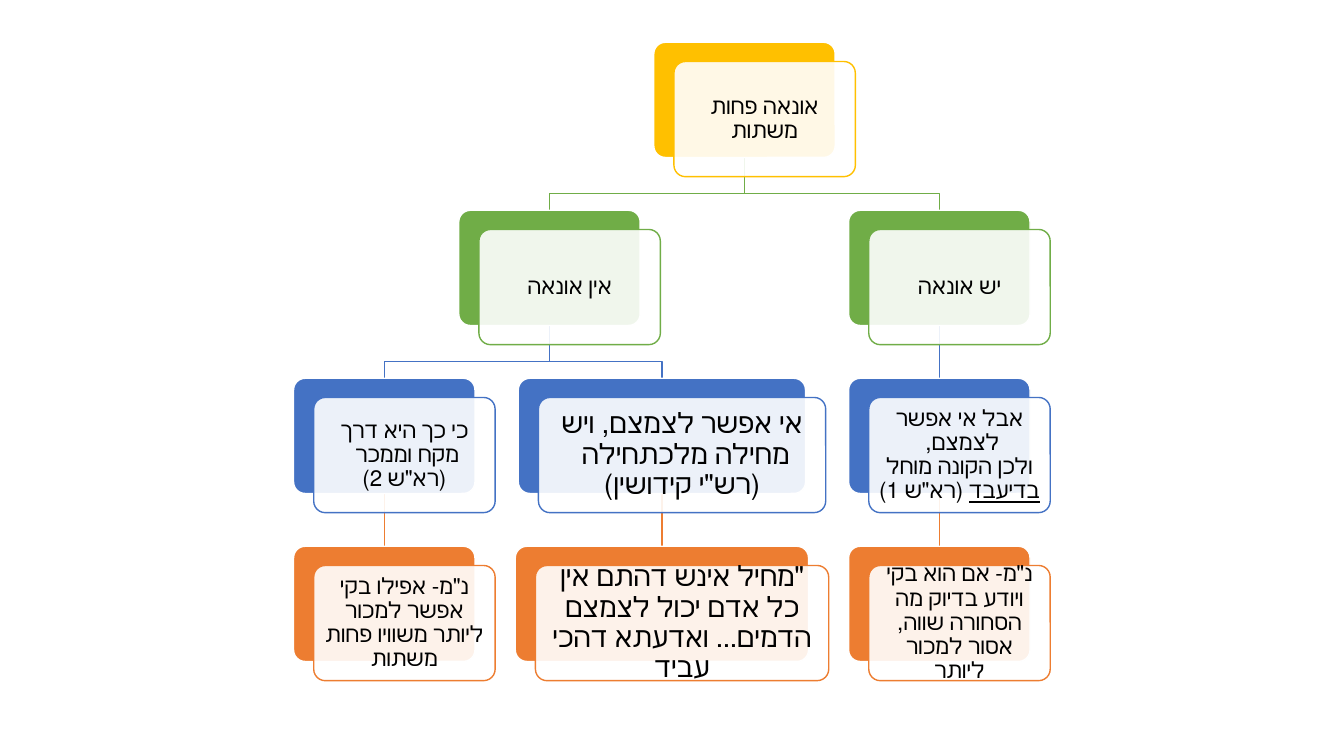
from lxml.etree import SubElement
from pptx import Presentation
from pptx.dml.color import RGBColor
from pptx.enum.shapes import MSO_CONNECTOR, MSO_SHAPE
from pptx.enum.text import MSO_ANCHOR, PP_ALIGN
from pptx.oxml.ns import qn
from pptx.util import Pt

FONT = "Calibri"
LEVEL_COLORS = ["FFC000", "70AD47", "4472C4", "ED7D31"]
NARROW = 129.6

# name: (parent, level, center, width, text size, text pieces with underline flag)
CARDS = {
    "root": (None, 0, 531.8, NARROW, 16, [("אונאה פחות משתות", False)]),
    "applies": ("root", 1, 671, NARROW, 16, [("יש אונאה", False)]),
    "waived": ("applies", 2, 671, NARROW, 16, [
        ("אבל אי אפשר לצמצם, \nולכן הקונה מוחל ", False),
        ("בדיעבד", True),
        (" (רא\"ש 1)", False)]),
    "expert": ("waived", 3, 671, NARROW, 16, [
        ("נ\"מ- אם הוא בקי ויודע בדיוק מה הסחורה שווה, אסור למכור ליותר", False)]),
    "exempt": ("root", 1, 392.5, NARROW, 16, [("אין אונאה", False)]),
    "imprecise": ("exempt", 2, 472.8, 205.2, 20, [
        ("אי אפשר לצמצם, ויש מחילה מלכתחילה \n(רש\"י קידושין)", False)]),
    "quote": ("imprecise", 3, 472.8, 209.5, 20, [
        ("\"מחיל אינש דהתם אין כל אדם יכול לצמצם הדמים... ואדעתא דהכי עביד", False)]),
    "custom": ("exempt", 2, 274.5, NARROW, 16, [
        ("כי כך היא דרך מקח וממכר \n(רא\"ש 2)", False)]),
    "allowed": ("custom", 3, 274.5, NARROW, 16, [
        ("נ\"מ- אפילו בקי אפשר למכור ליותר משוויו פחות משתות", False)]),
}

FIRST_TOP, ROW_STEP, CARD_HEIGHT = 30.2, 120, 82.3
SHIFT_X, SHIFT_Y = 14.4, 13.7
BEND = 12


def color(value):
    return RGBColor.from_string(value)


def level_top(level):
    return FIRST_TOP + level * ROW_STEP


def add_card(page, left, top, width, fill, outline):
    box = page.shapes.add_shape(MSO_SHAPE.ROUNDED_RECTANGLE,
                                Pt(left), Pt(top), Pt(width), Pt(CARD_HEIGHT))
    box.adjustments[0] = 0.1
    box.shadow.inherit = False
    box.fill.solid()
    box.fill.fore_color.rgb = color(fill)
    box.line.color.rgb = color(outline)
    box.line.width = Pt(1)
    return box


def make_translucent(box):
    tint = box._element.spPr.find(qn("a:solidFill"))[0]
    SubElement(tint, qn("a:alpha")).set("val", "90000")


def write_text(box, pieces, size):
    frame = box.text_frame
    frame.word_wrap = True
    frame.vertical_anchor = MSO_ANCHOR.MIDDLE
    inset = Pt(size * 0.3)
    frame.margin_left = frame.margin_right = inset
    frame.margin_top = frame.margin_bottom = inset
    para = frame.paragraphs[0]
    para.text = pieces[0][0]
    for text, underlined in pieces[1:]:
        span = para.add_run()
        span.text = text
        span.font.underline = underlined
    para.alignment = PP_ALIGN.CENTER
    para.line_spacing = 0.9
    para._p.get_or_add_pPr().set("rtl", "1")
    for span in para.runs:
        span.font.size = Pt(size)
        span.font.name = FONT
        span.font.color.rgb = color("000000")


def add_link(page, parent, child, start, end, line_color):
    if start[0] == end[0]:
        link = page.shapes.add_connector(MSO_CONNECTOR.STRAIGHT,
                                         *map(Pt, start + end))
        link.begin_connect(parent, 2)
        link.end_connect(child, 0)
        SubElement(link._element.spPr, qn("a:effectLst"))
    else:
        bend = end[1] - BEND
        builder = page.shapes.build_freeform(Pt(start[0]), Pt(start[1]))
        corners = [(start[0], bend), (end[0], bend), end]
        builder.add_line_segments([(Pt(x), Pt(y)) for x, y in corners], close=False)
        link = builder.convert_to_shape()
        link.fill.background()
        link.shadow.inherit = False
    link.line.color.rgb = color(line_color)
    link.line.width = Pt(1)
    link._element.getparent().insert(2, link._element)


def main():
    deck = Presentation()
    deck.slide_width, deck.slide_height = Pt(960), Pt(540)
    page = deck.slides.add_slide(deck.slide_layouts[6])
    backs = {}
    for name, (parent, level, center, width, size, pieces) in CARDS.items():
        left, top = center - width / 2, level_top(level)
        accent = LEVEL_COLORS[level]
        backs[name] = add_card(page, left, top, width, accent, "FFFFFF")
        front = add_card(page, left + SHIFT_X, top + SHIFT_Y, width, "FFFFFF", accent)
        make_translucent(front)
        write_text(front, pieces, size)
        if parent:
            start = (CARDS[parent][2], level_top(level - 1) + CARD_HEIGHT)
            add_link(page, backs[parent], backs[name], start, (center, top), accent)
    deck.save("out.pptx")


if __name__ == "__main__":
    main()
